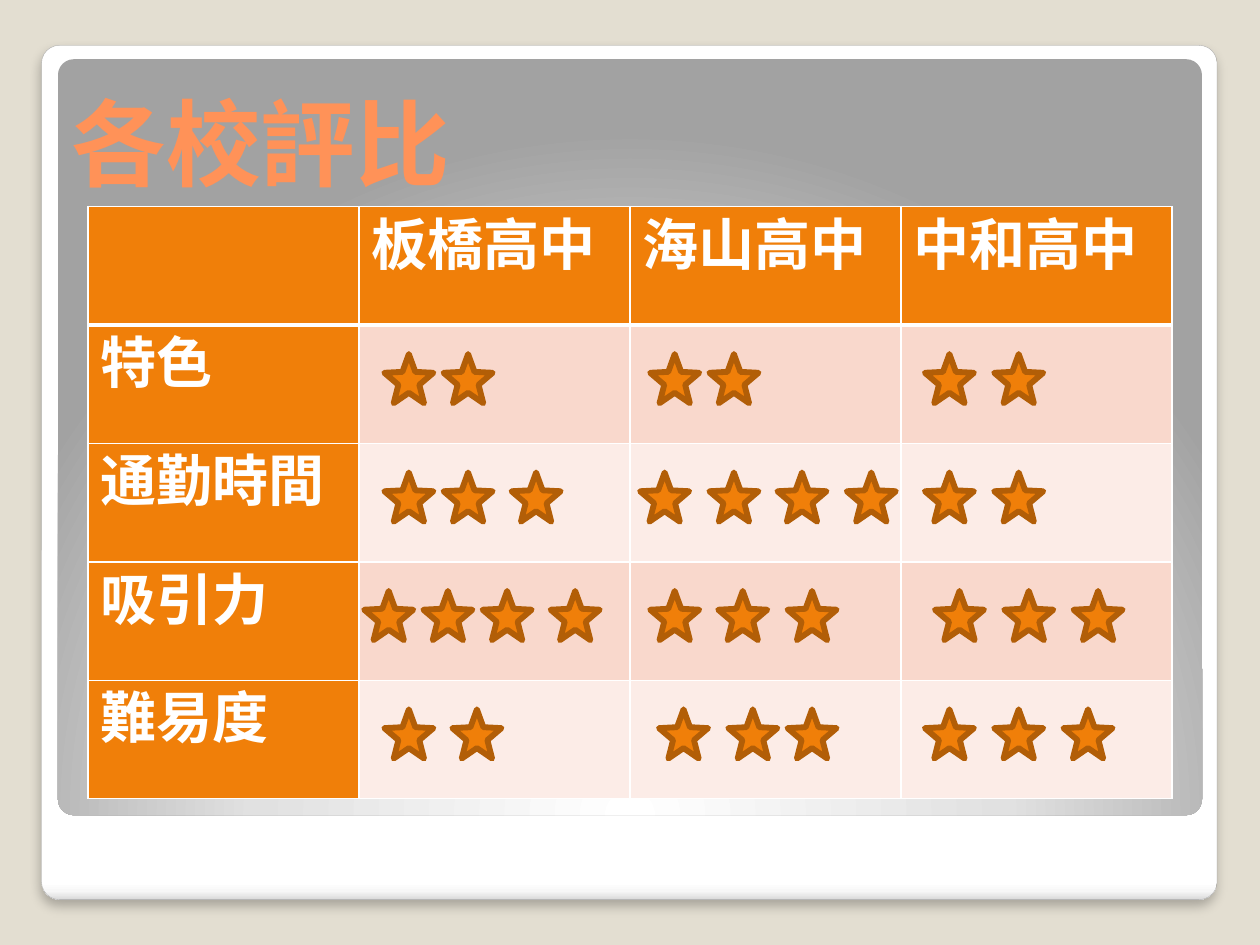
from lxml.etree import SubElement
from pptx import Presentation
from pptx.dml.color import RGBColor
from pptx.enum.shapes import MSO_SHAPE as SHAPE
from pptx.enum.text import MSO_ANCHOR as ANCHOR
from pptx.oxml import parse_xml
from pptx.oxml.ns import nsdecls, qn
from pptx.util import Inches, Pt

COLORS = {
    "background": "E3DED1", "frame_line": "A4A4A4", "shadow": "000000",
    "title": "FF9258", "orange": "F07F09", "star_line": "B25E07",
    "white": "FFFFFF", "band_dark": "F9D8CC", "band_light": "FCECE7",
}
FONT = "DejaVu Sans"
FRAME_STOPS = [(0, "FFFFFF"), (98, "FFFFFF"), (99, "F7F7F7"), (100, "DADADA")]
PANEL_STOPS = [(0, "FFFFFF"), (55, "E1E1E1"), (100, "A2A2A2")]
LINEAR_DOWN = '<a:lin ang="5400000" scaled="0"/>'
RADIAL_FROM_BELOW = ('<a:path path="circle"><a:fillToRect l="50000" t="175000" '
                     'r="50000" b="-75000"/></a:path>')

SCHOOLS = ["板橋高中", "海山高中", "中和高中"]
# Criterion: left edges of the stars for each school
RATINGS = {
    "特色": [[3.05, 3.52], [5.16, 5.63], [7.34, 7.89]],
    "通勤時間": [[3.05, 3.52, 4.06], [5.08, 5.63, 6.17, 6.72], [7.34, 7.89]],
    "吸引力": [[2.89, 3.36, 3.83, 4.37], [5.16, 5.7, 6.25], [7.42, 7.97, 8.52]],
    "難易度": [[3.05, 3.59], [5.23, 5.78, 6.25], [7.34, 7.89, 8.44]],
}
TABLE_LEFT, TABLE_TOP, COL_WIDTH, ROW_HEIGHT = 0.7, 1.64, 2.15, 0.94
STAR_SIZE, STAR_TOP = 0.39, 2.81


def rgb(name):
    return RGBColor.from_string(COLORS[name])


def write(tf, text, size=32, color="white", bold=True, font=FONT):
    r = tf.paragraphs[0].add_run()
    r.text = text
    r.font.size, r.font.bold, r.font.name = Pt(size), bold, font
    r.font.color.rgb = rgb(color)
    SubElement(r.font._element, qn("a:ea"), typeface=font)


class SlideBuilder:
    def __init__(self, slide):
        self.slide = slide
        bg = slide.background.fill
        bg.solid()
        bg.fore_color.rgb = rgb("background")

    def shape(self, kind, box, adjustments):
        sp = self.slide.shapes.add_shape(kind, *map(Inches, box))
        sp.shadow.inherit = False
        for i, value in enumerate(adjustments):
            sp.adjustments[i] = value
        return sp

    def gradient_panel(self, box, stops, direction):
        sp = self.shape(SHAPE.ROUNDED_RECTANGLE, box, [0.021])
        sp.line.fill.background()
        sp.fill.background()
        gs = "".join(f'<a:gs pos="{pos * 1000}"><a:srgbClr val="{color}"/></a:gs>'
                     for pos, color in stops)
        spPr = sp._element.spPr
        spPr.replace(spPr.find(qn("a:noFill")), parse_xml(
            f'<a:gradFill {nsdecls("a")} rotWithShape="1"><a:gsLst>{gs}</a:gsLst>'
            f'{direction}</a:gradFill>'))
        return sp

    def frame(self, box):
        sp = self.gradient_panel(box, FRAME_STOPS, LINEAR_DOWN)
        sp.line.color.rgb = rgb("frame_line")
        sp.line.width = Pt(0.16)
        sp._element.spPr.find(qn("a:effectLst")).append(parse_xml(
            f'<a:outerShdw {nsdecls("a")} blurRad="{Pt(6)}" dist="{Pt(4)}" '
            f'dir="5400000" algn="t" rotWithShape="0"><a:srgbClr val="{COLORS["shadow"]}">'
            f'<a:alpha val="25000"/></a:srgbClr></a:outerShdw>'))

    def title(self, box, text):
        tf = self.slide.shapes.add_textbox(*map(Inches, box)).text_frame
        tf.word_wrap = True
        tf.vertical_anchor = ANCHOR.BOTTOM
        write(tf, text, size=54, color="title")

    def borders(self, cell, **widths):
        """Draw white cell borders; widths in points by side L, R, T, B."""
        tcPr = cell._tc.get_or_add_tcPr()
        for i, side in enumerate("LRTB"):
            tcPr.insert(i, parse_xml(
                f'<a:ln{side} {nsdecls("a")} w="{Pt(widths.get(side, 1))}"><a:solidFill>'
                f'<a:srgbClr val="{COLORS["white"]}"/></a:solidFill></a:ln{side}>'))

    def table(self, rows):
        n_rows, n_cols = len(rows), len(rows[0])
        table = self.slide.shapes.add_table(
            n_rows, n_cols, Inches(TABLE_LEFT), Inches(TABLE_TOP),
            Inches(COL_WIDTH * n_cols), Inches(ROW_HEIGHT * n_rows)).table
        for i, row in enumerate(rows):
            for j, text in enumerate(row):
                cell = table.cell(i, j)
                band = "band_dark" if i % 2 else "band_light"
                cell.fill.solid()
                cell.fill.fore_color.rgb = rgb("orange" if i == 0 or j == 0 else band)
                self.borders(cell, B=3 if i == 0 else 1, T=3 if i == 1 else 1)
                if text:
                    write(cell.text_frame, text)

    def star(self, left, top):
        sp = self.shape(SHAPE.STAR_5_POINT, (left, top, STAR_SIZE, STAR_SIZE),
                        [0.213, 1.051, 1.106])
        sp.fill.solid()
        sp.fill.fore_color.rgb = rgb("orange")
        sp.line.color.rgb = rgb("star_line")
        sp.line.width = Pt(3.35)


def main():
    prs = Presentation()
    prs.slide_width, prs.slide_height = Inches(10), Inches(7.5)
    s = SlideBuilder(prs.slides.add_slide(prs.slide_layouts[6]))
    s.frame((0.33, 0.36, 9.33, 6.78))
    s.gradient_panel((0.46, 0.47, 9.08, 6), PANEL_STOPS, RADIAL_FROM_BELOW)
    s.title((0.47, 0.47, 8.95, 1.15), "各校評比")
    s.table([["", *SCHOOLS]] + [[name, "", "", ""] for name in RATINGS])
    for i, schools in enumerate(RATINGS.values()):
        for lefts in schools:
            for left in lefts:
                s.star(left, STAR_TOP + i * ROW_HEIGHT)
    prs.save("out.pptx")


if __name__ == "__main__":
    main()
